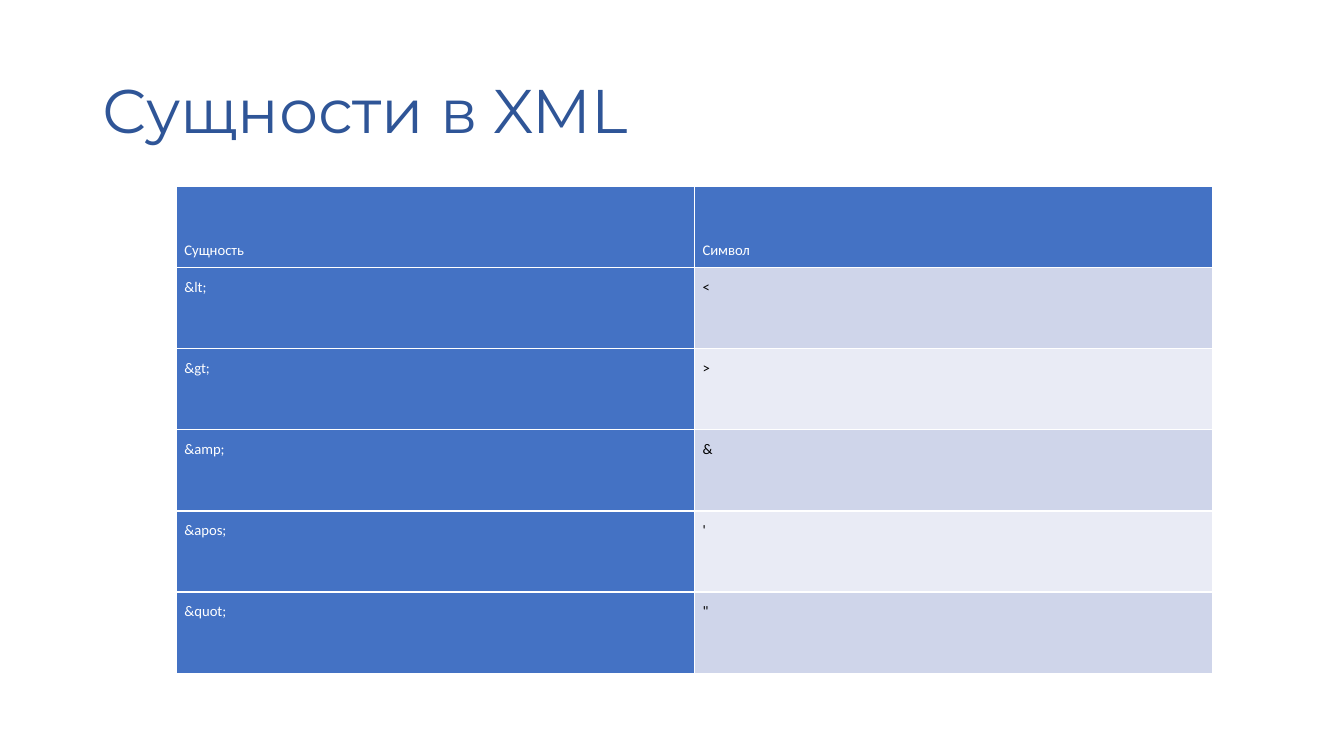
import pptx
import pptx.dml.color
import pptx.enum.text
import pptx.oxml
import pptx.oxml.ns
import pptx.util

Pt = pptx.util.Pt
Anchor = pptx.enum.text.MSO_ANCHOR

TITLE = "Сущности в XML"
ENTITIES = [
    ("Сущность", "Символ"),
    ("&lt;", "<"),
    ("&gt;", ">"),
    ("&amp;", "&"),
    ("&apos;", "'"),
    ("&quot;", "\""),
]

SLIDE_SIZE = (960, 540)
TITLE_BOX = (66, 28.8, 828, 104.4)
TABLE_BOX = (126, 133.2, 740.16, 347.76)
CELL_MARGIN = 5.76
ACCENT = "4472C4"
BANDS = ("CFD5EA", "E9EBF5")
WHITE = "FFFFFF"
TITLE_FORMAT = {"name": "Montserrat", "size": Pt(44), "bold": False}
CELL_FORMAT = {"name": "Calibri", "size": Pt(10.5), "bold": False}


def colour(target, value):
    target.rgb = pptx.dml.color.RGBColor.from_string(value)


def set_values(target, values):
    for name, value in values.items():
        setattr(target, name, value)


def write(frame, text, font_format, text_colour, spacing):
    para = frame.paragraphs[0]
    para.line_spacing = spacing
    span = para.add_run()
    span.text = text
    set_values(span.font, font_format)
    colour(span.font.color, text_colour)


def add_borders(cell):
    properties = cell._tc.get_or_add_tcPr()
    namespace = pptx.oxml.ns.nsdecls("a")
    for side in "LRTB":
        properties.append(pptx.oxml.parse_xml(
            f'<a:ln{side} {namespace} w="{Pt(1)}"><a:solidFill>'
            f'<a:srgbClr val="{WHITE}"/></a:solidFill></a:ln{side}>'))


def add_title(page):
    box = page.shapes.add_textbox(*map(Pt, TITLE_BOX))
    frame = box.text_frame
    set_values(frame, {"word_wrap": True, "vertical_anchor": Anchor.MIDDLE})
    write(frame, TITLE, TITLE_FORMAT, "2F5597", 0.9)


def add_entities(page):
    row_count, column_count = len(ENTITIES), len(ENTITIES[0])
    table = page.shapes.add_table(
        row_count, column_count, *map(Pt, TABLE_BOX)).table
    for column in table.columns:
        column.width = Pt(TABLE_BOX[2] / column_count)
    for row in table.rows:
        row.height = Pt(TABLE_BOX[3] / row_count)
    margins = {f"margin_{side}": Pt(CELL_MARGIN)
               for side in ("left", "right", "top", "bottom")}
    for row_index, texts in enumerate(ENTITIES):
        for column_index, text in enumerate(texts):
            cell = table.cell(row_index, column_index)
            is_header = row_index == 0
            is_accent = is_header or column_index == 0
            anchor = Anchor.BOTTOM if is_header else Anchor.TOP
            set_values(cell, {**margins, "vertical_anchor": anchor})
            add_borders(cell)
            cell.fill.solid()
            band = BANDS[(row_index - 1) % 2]
            colour(cell.fill.fore_color, ACCENT if is_accent else band)
            text_colour = WHITE if is_accent else "000000"
            write(cell.text_frame, text, CELL_FORMAT, text_colour, 1.15)


def main():
    deck = pptx.Presentation()
    deck.slide_width, deck.slide_height = map(Pt, SLIDE_SIZE)
    page = deck.slides.add_slide(deck.slide_layouts[6])
    add_title(page)
    add_entities(page)
    deck.save("out.pptx")


if __name__ == "__main__":
    main()
